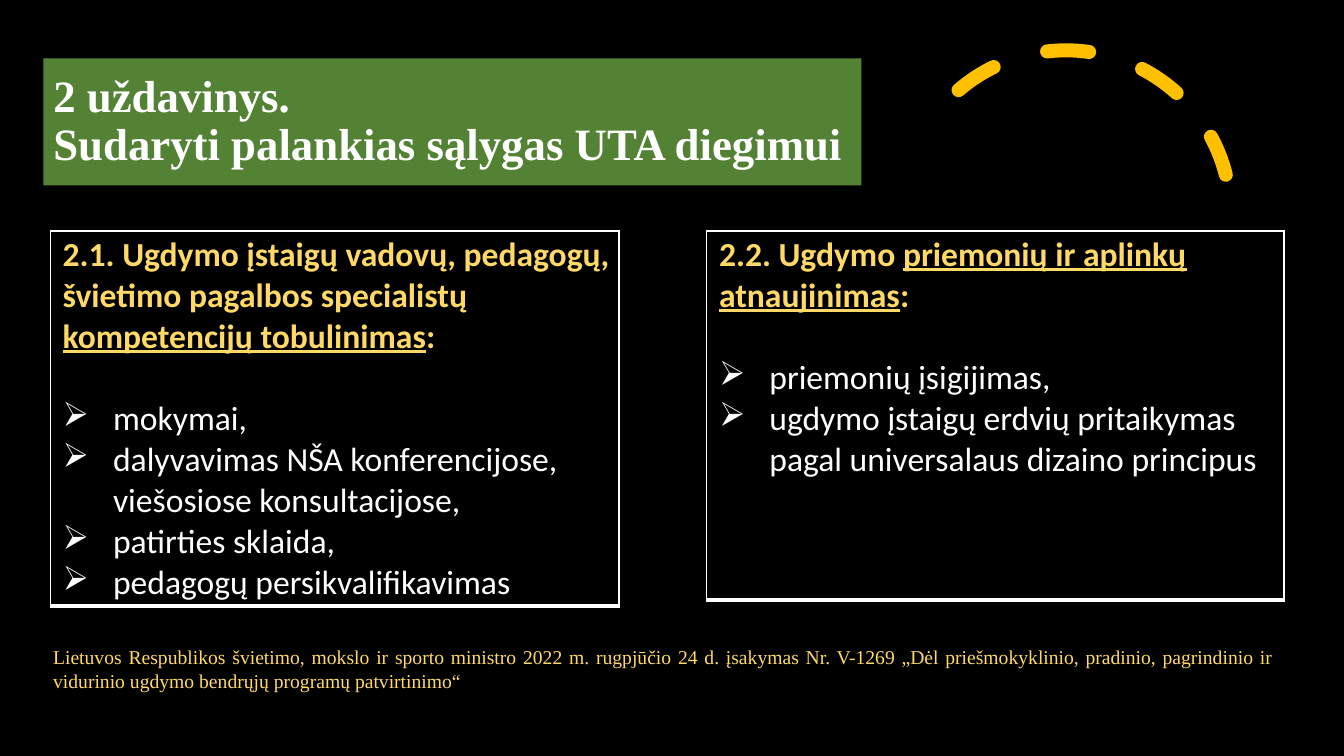
"""Build the slide on task 2: creating good conditions for UTA."""
from lxml import etree
from pptx import Presentation
from pptx import util as u
from pptx.dml.color import RGBColor
from pptx.enum import dml, shapes, text
from pptx.oxml import ns

BLACK = RGBColor(0x00, 0x00, 0x00)
WHITE = RGBColor(0xFF, 0xFF, 0xFF)
GREEN = RGBColor(0x54, 0x82, 0x35)
AMBER = RGBColor(0xFF, 0xC0, 0x00)
YELLOW = RGBColor(0xFF, 0xD9, 0x66)
SERIF = "Times New Roman"
SANS = "Calibri"


def add_text(paragraph, words, font=SANS, size=24, color=WHITE, bold=False, underline=False):
    run = paragraph.add_run()
    run.text = words
    run.font.name = font
    run.font.size = u.Pt(size)
    run.font.color.rgb = color
    run.font.bold = bold
    run.font.underline = underline


def add_element(parent, tag, **attributes):
    element = etree.SubElement(parent, ns.qn(tag))
    for name, value in attributes.items():
        element.set(name, str(value))
    return element


presentation = Presentation()
presentation.slide_width = u.Cm(33.87)
presentation.slide_height = u.Cm(19.05)
slide = presentation.slides.add_slide(presentation.slide_layouts[5])
slide.background.fill.solid()
slide.background.fill.fore_color.rgb = BLACK

arc = slide.shapes.add_shape(
    shapes.MSO_SHAPE.ARC, u.Cm(22.71), u.Cm(1.27), u.Cm(8.31), u.Cm(8.31))
arc.shadow.inherit = False
arc.rotation = 345.8
arc.adjustments[0] = 146.13
arc.adjustments[1] = 0
arc.fill.background()
arc.line.color.rgb = AMBER
arc.line.width = u.Pt(10)
arc.line.dash_style = dml.MSO_LINE.DASH
arc.line._get_or_add_ln().set("cap", "rnd")

title = slide.shapes.title
title.left, title.top = u.Cm(1.09), u.Cm(1.47)
title.width, title.height = u.Cm(20.62), u.Cm(3.2)
title.fill.solid()
title.fill.fore_color.rgb = GREEN
title.text_frame.auto_size = text.MSO_AUTO_SIZE.NONE
title.text_frame.vertical_anchor = text.MSO_ANCHOR.MIDDLE
title_paragraph = title.text_frame.paragraphs[0]
title_paragraph.alignment = text.PP_ALIGN.LEFT
title_paragraph.line_spacing = 0.9
add_text(title_paragraph, "2 uždavinys.", font=SERIF, size=32, bold=True)
title_paragraph.add_line_break()
add_text(title_paragraph, "Sudaryti palankias sąlygas UTA diegimui",
         font=SERIF, size=32, bold=True)

MEASURES = [
    (1.27, 14.33,
     "2.1. Ugdymo įstaigų vadovų, pedagogų, švietimo pagalbos specialistų ",
     "kompetencijų tobulinimas",
     ["mokymai,",
      "dalyvavimas NŠA konferencijose, viešosiose konsultacijose,",
      "patirties sklaida,",
      "pedagogų persikvalifikavimas"]),
    (17.81, 14.55,
     "2.2. Ugdymo ",
     "priemonių ir aplinkų atnaujinimas",
     ["priemonių įsigijimas,",
      "ugdymo įstaigų erdvių pritaikymas pagal universalaus dizaino principus"]),
]
BORDERS = [("a:lnL", 1), ("a:lnR", 1), ("a:lnT", 1), ("a:lnB", 3)]

for left, width, heading, emphasis, actions in MEASURES:
    table = slide.shapes.add_table(
        1, 1, u.Cm(left), u.Cm(5.82), u.Cm(width), u.Cm(9.3)).table
    table.first_row = table.horz_banding = False
    cell = table.cell(0, 0)
    cell.margin_left = cell.margin_right = u.Cm(0.08)
    cell.margin_top = cell.margin_bottom = u.Cm(0.08)
    cell_properties = cell._tc.get_or_add_tcPr()
    for tag, points in BORDERS:
        border = add_element(cell_properties, tag, w=u.Pt(points))
        add_element(add_element(border, "a:solidFill"), "a:srgbClr", val=WHITE)
    cell.fill.background()

    paragraph = cell.text_frame.paragraphs[0]
    paragraph.space_after = u.Pt(29.3)
    paragraph._p.get_or_add_pPr().set("marL", str(u.Cm(0.23)))
    add_text(paragraph, heading, color=YELLOW, bold=True)
    add_text(paragraph, emphasis, color=YELLOW, bold=True, underline=True)
    add_text(paragraph, ":", color=YELLOW, bold=True)
    for action in actions:
        paragraph = cell.text_frame.add_paragraph()
        properties = paragraph._p.get_or_add_pPr()
        properties.set("marL", str(u.Cm(1.5)))
        properties.set("indent", str(u.Cm(-1.27)))
        add_element(properties, "a:buChar", char="➢")
        add_text(paragraph, action)

source = slide.shapes.add_textbox(u.Cm(1.09), u.Cm(16.13), u.Cm(31.27), u.Cm(1.45))
source.text_frame.word_wrap = True
source_paragraph = source.text_frame.paragraphs[0]
source_paragraph.alignment = text.PP_ALIGN.JUSTIFY
add_text(source_paragraph,
         "Lietuvos Respublikos švietimo, mokslo ir sporto ministro 2022 m. "
         "rugpjūčio 24 d. įsakymas Nr. V-1269 „Dėl priešmokyklinio, pradinio, "
         "pagrindinio ir vidurinio ugdymo bendrųjų programų patvirtinimo“",
         font=SERIF, size=14, color=YELLOW)

presentation.save("out.pptx")
